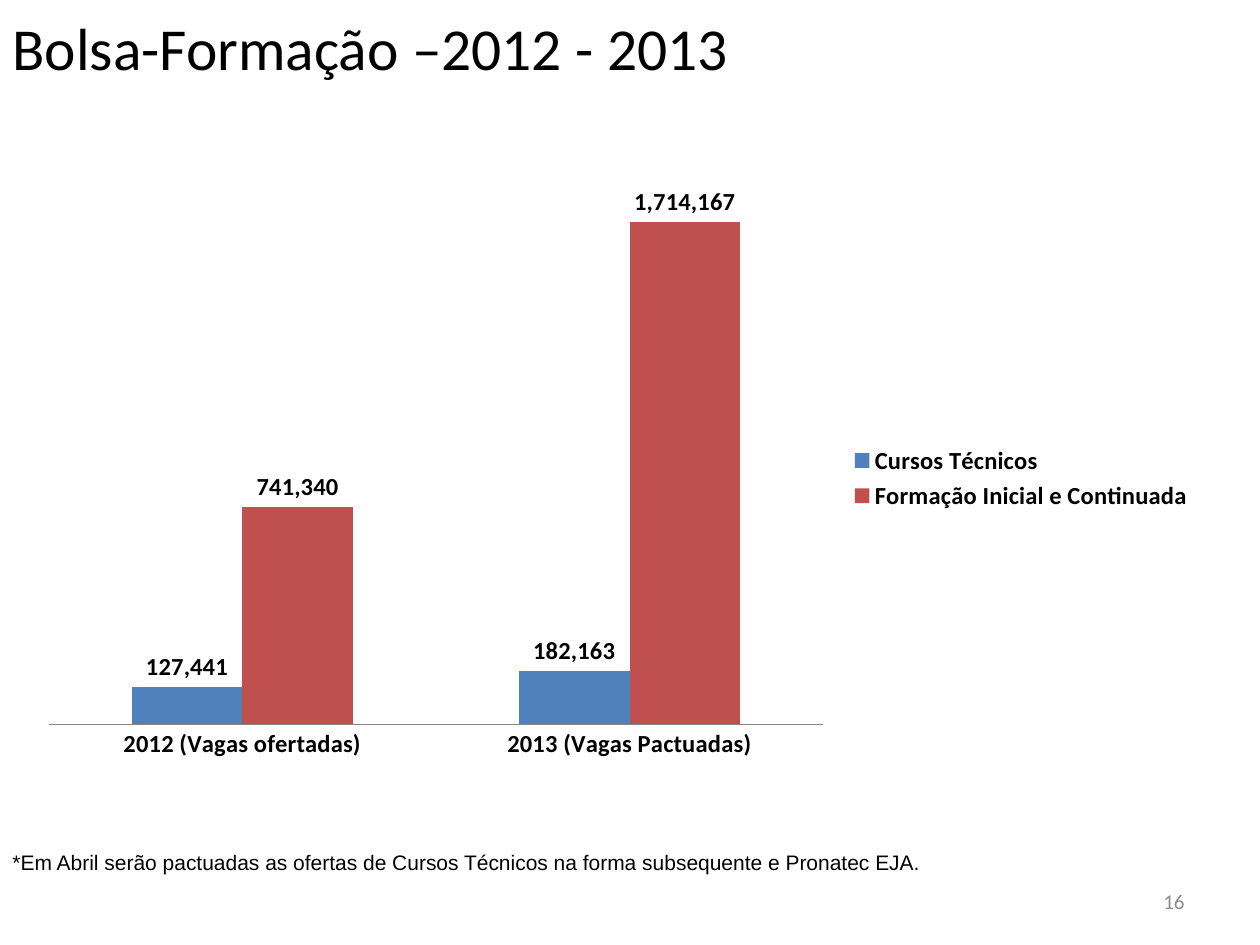
from pptx import Presentation
from pptx.chart.data import CategoryChartData
from pptx.dml.color import RGBColor
from pptx.enum.chart import (XL_CHART_TYPE as ChartType, XL_LABEL_POSITION as LabelPosition,
                             XL_LEGEND_POSITION as LegendPosition, XL_TICK_MARK as TickMark)
from pptx.enum.text import MSO_ANCHOR as Anchor, PP_ALIGN as Align
from pptx.util import Inches, Pt

TITLE = "Bolsa-Formação –2012 - 2013"
FOOTNOTE = "*Em Abril serão pactuadas as ofertas de Cursos Técnicos na forma subsequente e Pronatec EJA."
PAGE_NUMBER = "16"
CATEGORIES = ["2012 (Vagas ofertadas)", "2013 (Vagas Pactuadas)"]
SERIES = [
    ("Cursos Técnicos", (127441, 182163), "4F81BD"),
    ("Formação Inicial e Continuada", (741340, 1714167), "C0504D"),
]
NUMBER_FORMAT = "#,##0"


def color(hex_value):
    return RGBColor.from_string(hex_value)


def style_font(font, size, name="Calibri", hex_value="000000", bold=False):
    font.size, font.name, font.bold = Pt(size), name, bold
    font.color.rgb = color(hex_value)


def fill_text(shape, text, size, name="Calibri", hex_value="000000",
              align=Align.LEFT, anchor=Anchor.TOP):
    frame = shape.text_frame
    frame.text = text
    frame.word_wrap = True
    frame.vertical_anchor = anchor
    paragraph = frame.paragraphs[0]
    paragraph.alignment = align
    style_font(paragraph.runs[0].font, size, name, hex_value)


def add_chart(slide):
    data = CategoryChartData(number_format=NUMBER_FORMAT)
    data.categories = CATEGORIES
    for name, values, _ in SERIES:
        data.add_series(name, values)
    chart = slide.shapes.add_chart(ChartType.COLUMN_CLUSTERED, Inches(0.2), Inches(1.47),
                                   Inches(9.37), Inches(4.65), data).chart
    style_font(chart.font, 10)
    chart.has_title = False
    chart.has_legend = True
    chart.legend.position = LegendPosition.RIGHT
    chart.legend.include_in_layout = False
    style_font(chart.legend.font, 14, bold=True)

    category_axis, value_axis = chart.category_axis, chart.value_axis
    category_axis.major_tick_mark = TickMark.NONE
    category_axis.format.line.color.rgb = color("868686")
    style_font(category_axis.tick_labels.font, 14, bold=True)
    value_axis.visible = False
    value_axis.has_major_gridlines = False
    value_axis.minimum_scale, value_axis.maximum_scale = 0, 1800000

    plot = chart.plots[0]
    plot.gap_width, plot.overlap, plot.vary_by_categories = 150, 0, False
    for series, (_, _, hex_value) in zip(plot.series, SERIES):
        series.format.fill.solid()
        series.format.fill.fore_color.rgb = color(hex_value)
        labels = series.data_labels
        labels.show_value = True
        labels.number_format, labels.number_format_is_linked = NUMBER_FORMAT, False
        labels.position = LabelPosition.OUTSIDE_END
        style_font(labels.font, 14, bold=True)


def main():
    """Build the slide comparing places offered and agreed by course type."""
    presentation = Presentation()
    presentation.slide_width, presentation.slide_height = Inches(10), Inches(7.5)
    slide = presentation.slides.add_slide(presentation.slide_layouts[5])

    title = slide.shapes.title
    title.left, title.top, title.width, title.height = (
        Inches(0), Inches(0.04), Inches(10), Inches(1.1))
    fill_text(title, TITLE, 34)

    add_chart(slide)
    footnote = slide.shapes.add_textbox(Inches(0), Inches(6.69), Inches(7.68), Inches(0.3))
    fill_text(footnote, FOOTNOTE, 12, "Arial")
    page_number = slide.shapes.add_textbox(Inches(7.17), Inches(6.95), Inches(2.33), Inches(0.4))
    fill_text(page_number, PAGE_NUMBER, 12, hex_value="8C8C8C",
              align=Align.RIGHT, anchor=Anchor.MIDDLE)

    presentation.save("out.pptx")


if __name__ == "__main__":
    main()
